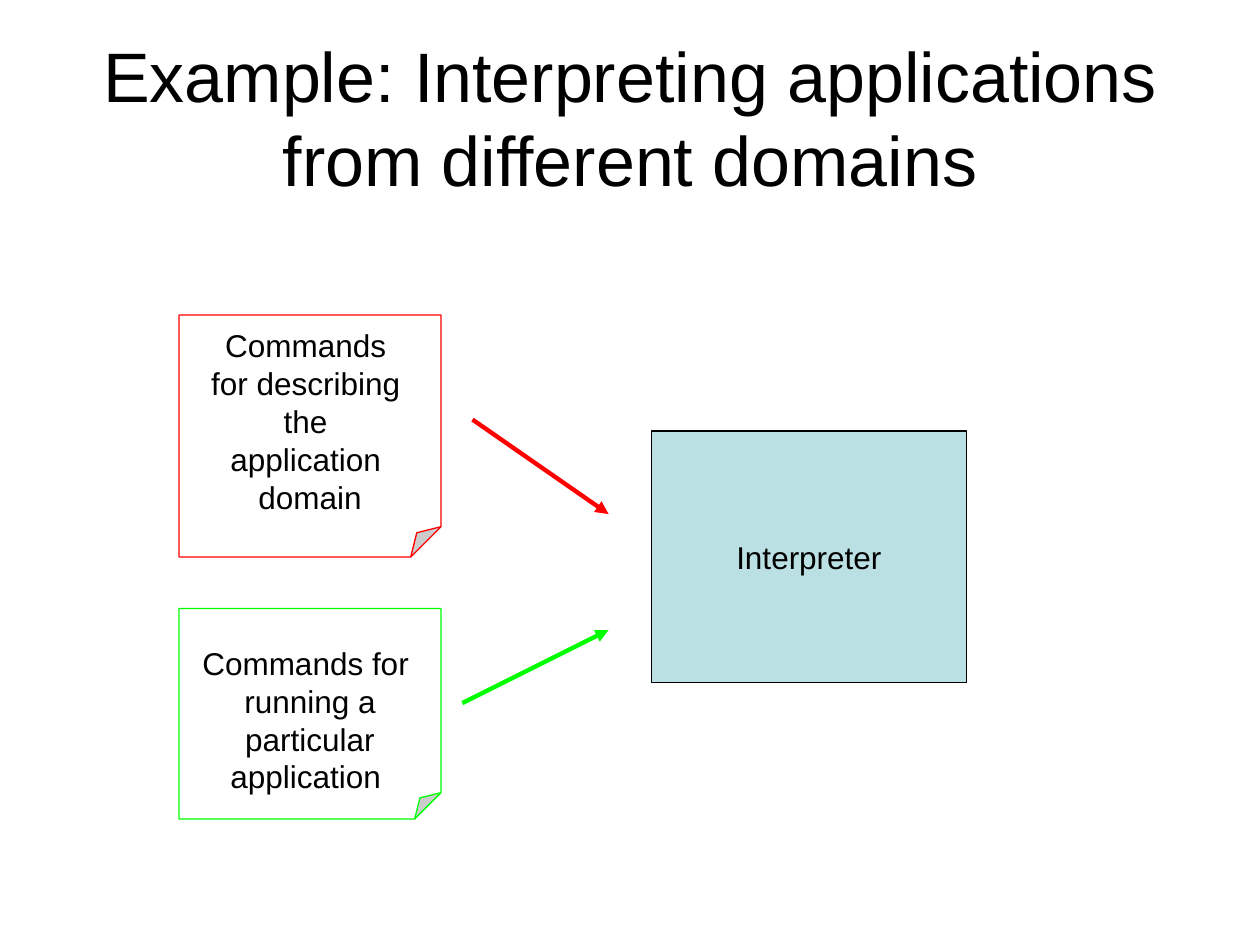
from pptx import Presentation
from pptx.dml.color import RGBColor
from pptx.enum.shapes import MSO_CONNECTOR, MSO_SHAPE
from pptx.enum.text import MSO_ANCHOR, PP_ALIGN
from pptx.oxml.ns import qn
from pptx.util import Inches, Pt
from lxml.etree import SubElement

TITLE = "Example: Interpreting applications from different domains"
BLACK, RED, GREEN = "000000", "FF0000", "00FF00"
RECTANGLE, NOTE = MSO_SHAPE.RECTANGLE, MSO_SHAPE.FOLDED_CORNER

# preset, (left, top, width, height), fill, line, top inset, lines of text
BOXES = [
    (RECTANGLE, (5.17, 3.42, 2.5, 2), "BBE0E3", BLACK, 0.05, ["Interpreter"]),
    (NOTE, (1.42, 2.5, 2.08, 1.92), "FFFFFF", RED, 0.05,
     ["Commands ", "for describing ", "the ", "application ", "domain"]),
    (NOTE, (1.42, 4.83, 2.08, 1.67), "FFFFFF", GREEN, 0.35,
     ["Commands for ", "running a", "particular", "application "]),
]
# start x, start y, end x, end y, color
ARROWS = [
    (3.75, 3.33, 4.83, 4.08, RED),
    (3.67, 5.58, 4.83, 5, GREEN),
]


def color(hex_string):
    return RGBColor.from_string(hex_string)


def format_text(text_frame, size):
    text_frame.vertical_anchor = MSO_ANCHOR.MIDDLE
    for paragraph in text_frame.paragraphs:
        paragraph.alignment = PP_ALIGN.CENTER
        for run in paragraph.runs:
            run.font.name = "Arial"
            run.font.size = Pt(size)
            run.font.color.rgb = color(BLACK)


def set_fold(shape):
    """Set the corner size, which python-pptx does not list for this preset."""
    geometry = shape.element.spPr.find(qn("a:prstGeom"))
    SubElement(geometry.find(qn("a:avLst")), qn("a:gd"), name="adj", fmla="val 12500")


def add_box(slide, preset, place, fill, line, top_inset, lines):
    shape = slide.shapes.add_shape(preset, *map(Inches, place))
    shape.shadow.inherit = False
    if preset == NOTE:
        set_fold(shape)
    shape.fill.solid()
    shape.fill.fore_color.rgb = color(fill)
    shape.line.color.rgb = color(line)
    shape.line.width = Pt(0.75)
    text_frame = shape.text_frame
    text_frame.word_wrap = False
    text_frame.margin_top = Inches(top_inset)
    text_frame.text = "\n".join(lines)
    format_text(text_frame, 18)


def add_arrow(slide, *ends, line):
    arrow = slide.shapes.add_connector(MSO_CONNECTOR.STRAIGHT, *map(Inches, ends))
    arrow.line.color.rgb = color(line)
    arrow.line.width = Pt(2.5)
    properties = arrow.element.spPr
    SubElement(properties.find(qn("a:ln")), qn("a:tailEnd"), type="triangle")
    SubElement(properties, qn("a:effectLst"))


def main():
    presentation = Presentation()
    presentation.slide_width, presentation.slide_height = Inches(10), Inches(7.5)
    slide = presentation.slides.add_slide(presentation.slide_layouts[5])

    title = slide.shapes.title
    title.left, title.top, title.width, title.height = map(Inches, (0.5, 0.3, 9, 1.25))
    title.text_frame.text = TITLE
    format_text(title.text_frame, 40)

    for box in BOXES:
        add_box(slide, *box)
    for *ends, line in ARROWS:
        add_arrow(slide, *ends, line=line)

    presentation.save("out.pptx")


if __name__ == "__main__":
    main()
